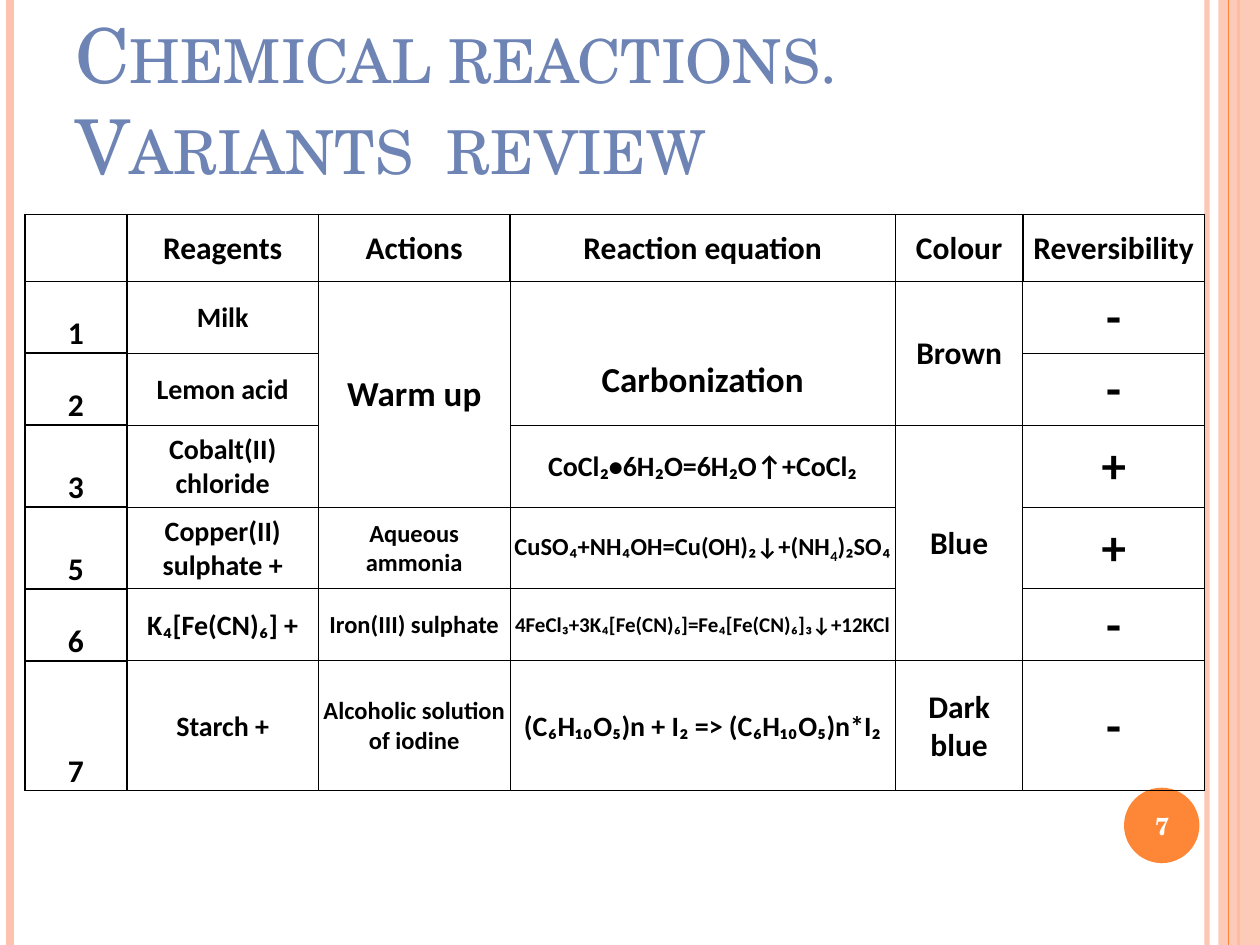
from dataclasses import dataclass
from typing import Any

from lxml import etree
from pptx import Presentation
from pptx import util as u
from pptx.dml.color import RGBColor
from pptx.enum import shapes, text
from pptx.oxml import ns

BLACK = RGBColor(0x00, 0x00, 0x00)
WHITE = RGBColor(0xFF, 0xFF, 0xFF)
ORANGE = RGBColor(0xFE, 0x86, 0x37)
PEACH = RGBColor(0xFE, 0xC3, 0xAE)
SLATE = RGBColor(0x6E, 0x84, 0xB4)

SLIDE_WIDTH, SLIDE_HEIGHT = 25.4, 19.05
SERIF, SANS = "TeX Gyre Schola", "Calibri"
MIDDLE, BOTTOM = text.MSO_ANCHOR.MIDDLE, text.MSO_ANCHOR.BOTTOM
CENTER = text.PP_ALIGN.CENTER
COLUMN_WIDTHS = (2.06, 3.86, 3.86, 7.77, 2.57, 3.66)
ROW_HEIGHTS = (1.35, 1.45, 1.45, 1.65, 1.65, 1.45, 2.62)
CELL_MARGINS = {"margin_left": 0.03, "margin_right": 0.03, "margin_top": 0.03, "margin_bottom": 0}


@dataclass(frozen=True)
class Box:
    left: float
    top: float
    width: float
    height: float

    def lengths(self) -> tuple[u.Length, ...]:
        return tuple(u.Cm(value) for value in (self.left, self.top, self.width, self.height))


@dataclass(frozen=True)
class Stripe:
    x: float
    color: RGBColor
    width: float
    opacity: int = 100


@dataclass(frozen=True)
class Entry:
    row: int
    column: int
    wording: str
    size: float
    span: int = 1
    anchor: Any = MIDDLE
    lift: float = 0


STRIPES = (
    Stripe(24.33, PEACH, 3, 93),
    Stripe(0.2, PEACH, 4.5),
    Stripe(24.97, ORANGE, 1.5),
)
INNER_STRIPE = Stripe(24.77, ORANGE, 0.75)
SIDE_BAND = Box(24.56, 0, 0.84, SLIDE_HEIGHT)
NUMBER_DISC = Box(22.66, 15.88, 1.52, 1.52)

HEADERS = ("Reagents", "Actions", "Reaction equation", "Colour", "Reversibility")
ROW_NUMBERS = ("1", "2", "3", "5", "6", "7")
REVERSIBILITY = ("-", "-", "+", "+", "-", "-")
ENTRIES = (
    *(Entry(0, column, name, 18) for column, name in enumerate(HEADERS, 1)),
    *(Entry(row, 0, number, 18, anchor=BOTTOM) for row, number in enumerate(ROW_NUMBERS, 1)),
    *(Entry(row, 5, sign, 28) for row, sign in enumerate(REVERSIBILITY, 1)),
    Entry(1, 1, "Milk", 16),
    Entry(2, 1, "Lemon acid", 16),
    Entry(3, 1, "Cobalt(II) chloride", 16),
    Entry(4, 1, "Copper(II) sulphate +", 16),
    Entry(5, 1, "K₄[Fe(CN)₆] +", 16),
    Entry(6, 1, "Starch +", 16),
    Entry(1, 2, "Warm up", 20, span=3),
    Entry(4, 2, "Aqueous ammonia", 14),
    Entry(5, 2, "Iron(III) sulphate", 14),
    Entry(6, 2, "Alcoholic solution of iodine", 14),
    Entry(1, 3, "Carbonization", 20, span=2, anchor=BOTTOM, lift=0.47),
    Entry(3, 3, "CoCl₂•6H₂O=6H₂O↑+CoCl₂", 16),
    Entry(4, 3, "CuSO₄+NH₄OH=Cu(OH)₂↓+(NH~4~)₂SO₄", 14),
    Entry(5, 3, "4FeCl₃+3K₄[Fe(CN)₆]=Fe₄[Fe(CN)₆]₃↓+12KCl", 12),
    Entry(6, 3, "(C₆H₁₀O₅)n + I₂ => (C₆H₁₀O₅)n*I₂", 16),
    Entry(1, 4, "Brown", 18, span=2),
    Entry(3, 4, "Blue", 18, span=3),
    Entry(6, 4, "Dark blue", 18),
)


def apply_format(target: Any, values: dict[str, Any]) -> None:
    for name, value in values.items():
        setattr(target, name, value)


def write(frame: Any, wording: str, size: float, font: str, color: RGBColor,
          bold: bool = False, alignment: Any = None) -> Any:
    paragraph = frame.paragraphs[0]
    paragraph.alignment = alignment
    for index, part in enumerate(wording.split("~")):
        run = paragraph.add_run()
        run.text = part
        apply_format(run.font, {"name": font, "size": u.Pt(size), "bold": bold})
        run.font.color.rgb = color
        if index % 2:
            run.font._element.set("baseline", "-25000")
    return paragraph


def set_opacity(element: Any, opacity: int) -> None:
    color = next(element.iter(ns.qn("a:srgbClr")))
    etree.SubElement(color, ns.qn("a:alpha")).set("val", str(opacity * 1000))


def draw_stripe(slide: Any, stripe: Stripe) -> None:
    x = u.Cm(stripe.x)
    connector = slide.shapes.add_connector(
        shapes.MSO_CONNECTOR.STRAIGHT, x, u.Cm(0), x, u.Cm(SLIDE_HEIGHT))
    connector.line.color.rgb = stripe.color
    connector.line.width = u.Pt(stripe.width)
    properties = connector._element.spPr
    if stripe.opacity < 100:
        set_opacity(properties, stripe.opacity)
    etree.SubElement(properties, ns.qn("a:effectLst"))


def draw_shape(slide: Any, kind: Any, box: Box, color: RGBColor) -> Any:
    shape = slide.shapes.add_shape(kind, *box.lengths())
    shape.shadow.inherit = False
    shape.fill.solid()
    shape.fill.fore_color.rgb = color
    shape.line.fill.background()
    return shape


def draw_text_box(slide: Any, box: Box, anchor: Any) -> Any:
    frame = slide.shapes.add_textbox(*box.lengths()).text_frame
    apply_format(frame, {"word_wrap": True, "vertical_anchor": anchor})
    return frame


def draw_borders(cell: Any, row: int, column: int) -> None:
    last_row, last_column = len(ROW_HEIGHTS) - 1, len(COLUMN_WIDTHS) - 1
    thin_edges = {
        "L": row > 0 and column > 1,
        "R": row > 0 and 0 < column < last_column,
        "T": row > 1 and column > 0,
        "B": 0 < row < last_row and column > 0,
    }
    properties = cell._tc.get_or_add_tcPr()
    for side, thin in thin_edges.items():
        if cell.is_spanned and side in "TB":
            continue
        line = etree.SubElement(properties, ns.qn(f"a:ln{side}"))
        line.set("w", str(u.Pt(0.5 if thin else 1)))
        fill = etree.SubElement(line, ns.qn("a:solidFill"))
        etree.SubElement(fill, ns.qn("a:srgbClr")).set("val", str(BLACK))


def draw_table(slide: Any, left: float, top: float) -> None:
    box = Box(left, top, sum(COLUMN_WIDTHS), sum(ROW_HEIGHTS))
    table = slide.shapes.add_table(
        len(ROW_HEIGHTS), len(COLUMN_WIDTHS), *box.lengths()).table
    apply_format(table, {"first_row": False, "horz_banding": False})
    for column, width in zip(table.columns, COLUMN_WIDTHS):
        column.width = u.Cm(width)
    for row, height in zip(table.rows, ROW_HEIGHTS):
        row.height = u.Cm(height)
    for entry in ENTRIES:
        cell = table.cell(entry.row, entry.column)
        if entry.span > 1:
            cell.merge(table.cell(entry.row + entry.span - 1, entry.column))
        margins = {**CELL_MARGINS, "margin_bottom": entry.lift}
        apply_format(cell, {name: u.Cm(value) for name, value in margins.items()})
        cell.vertical_anchor = entry.anchor
        write(cell.text_frame, entry.wording, entry.size, SANS, BLACK, True, CENTER)
    for row in range(len(ROW_HEIGHTS)):
        for column in range(len(COLUMN_WIDTHS)):
            cell = table.cell(row, column)
            draw_borders(cell, row, column)
            cell.fill.background()


def main() -> None:
    presentation = Presentation()
    apply_format(presentation, {"slide_width": u.Cm(SLIDE_WIDTH), "slide_height": u.Cm(SLIDE_HEIGHT)})
    slide = presentation.slides.add_slide(presentation.slide_layouts[6])

    for stripe in STRIPES:
        draw_stripe(slide, stripe)
    band = draw_shape(slide, shapes.MSO_SHAPE.RECTANGLE, SIDE_BAND, PEACH)
    set_opacity(band._element.spPr, 87)
    draw_stripe(slide, INNER_STRIPE)
    draw_shape(slide, shapes.MSO_SHAPE.OVAL, NUMBER_DISC, ORANGE)

    title = draw_text_box(slide, Box(1.27, 0.76, 20.75, 3.18), BOTTOM)
    heading = write(title, "Chemical reactions. Variants  review", 43.2, SERIF, SLATE)
    heading.runs[0].font._element.set("cap", "small")
    number = draw_text_box(slide, Box(22.58, 15.93, 1.7, 1.45), MIDDLE)
    write(number, "7", 14, SERIF, WHITE, True, CENTER)
    draw_table(slide, 0.5, 4.32)
    presentation.save("out.pptx")


if __name__ == "__main__":
    main()
